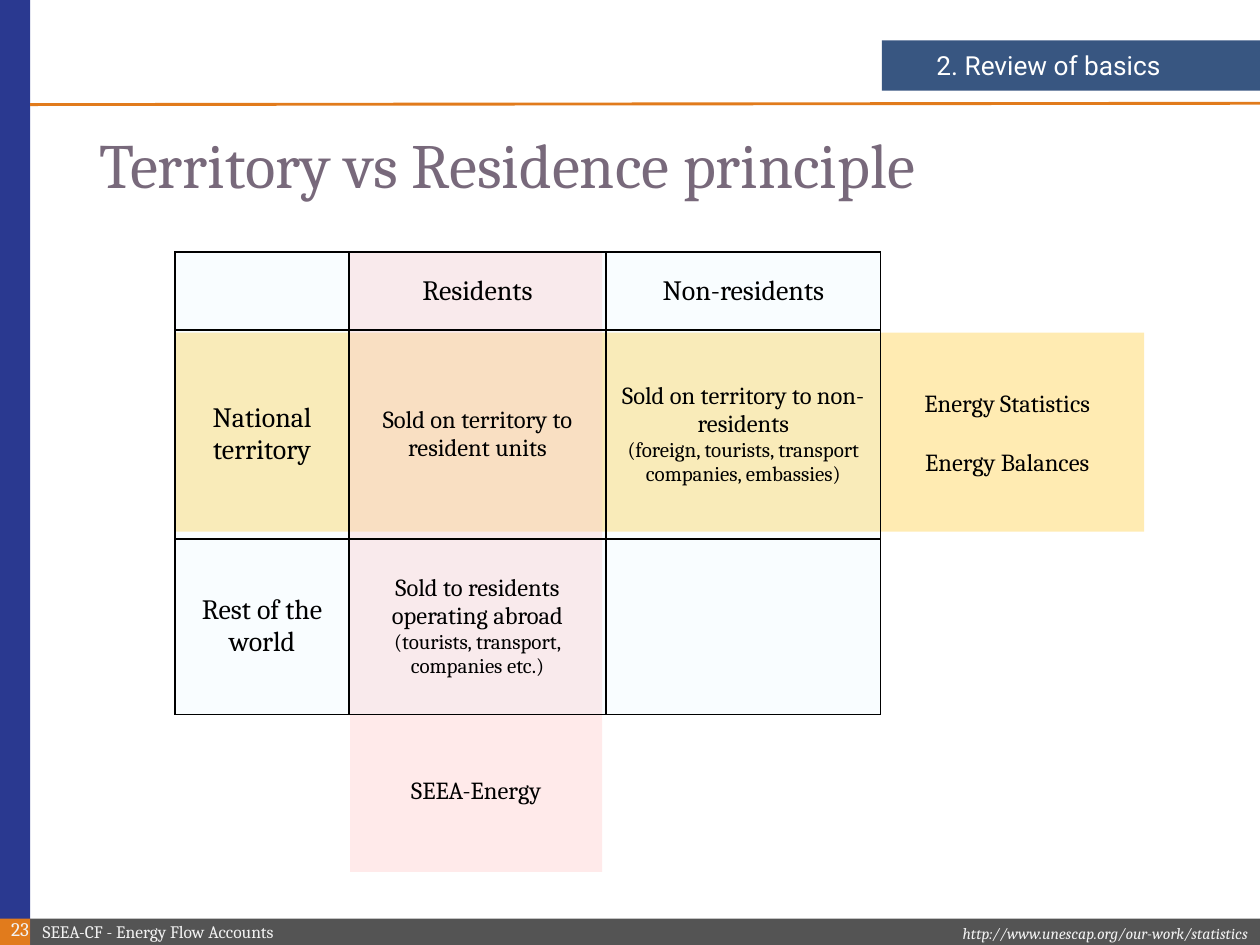
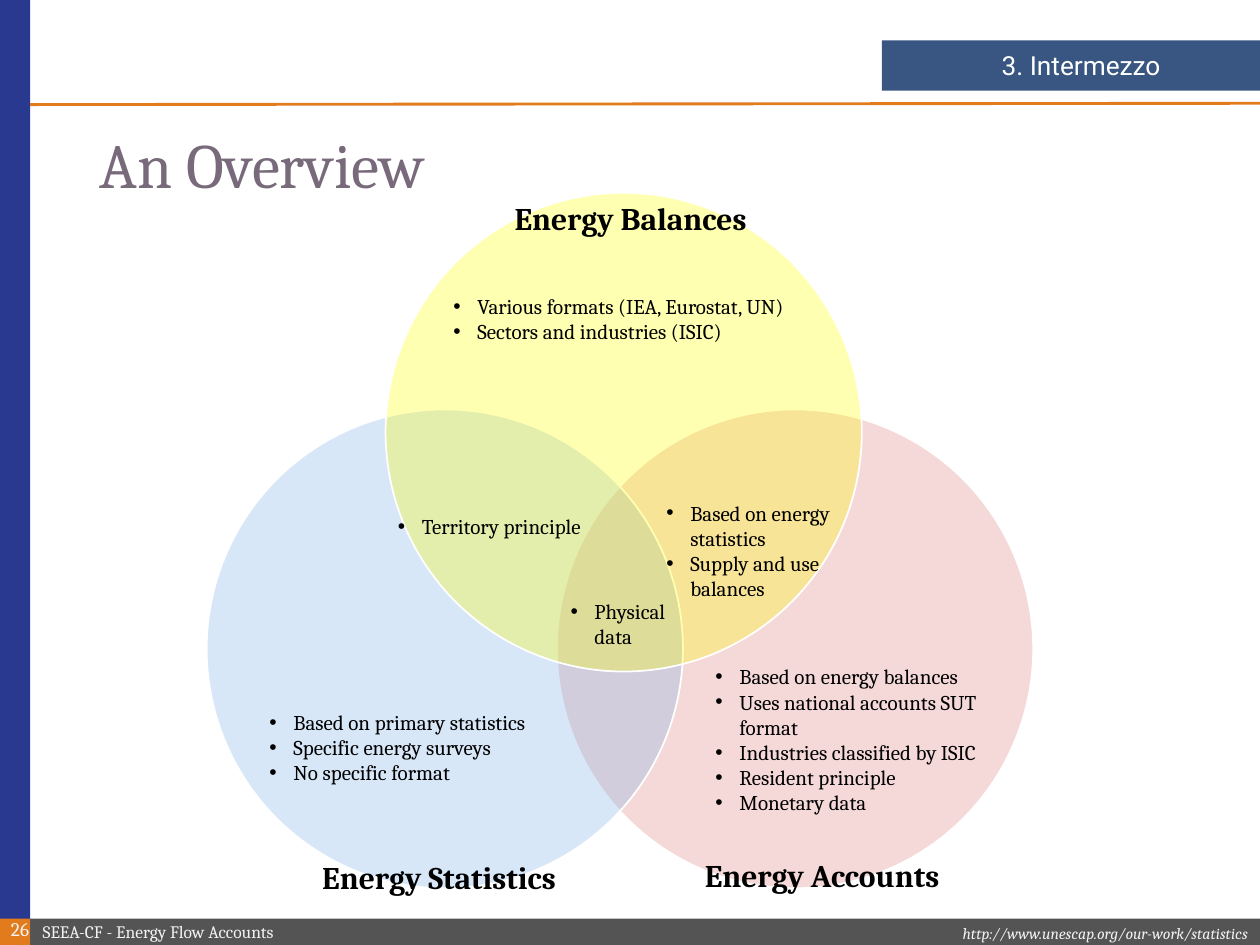
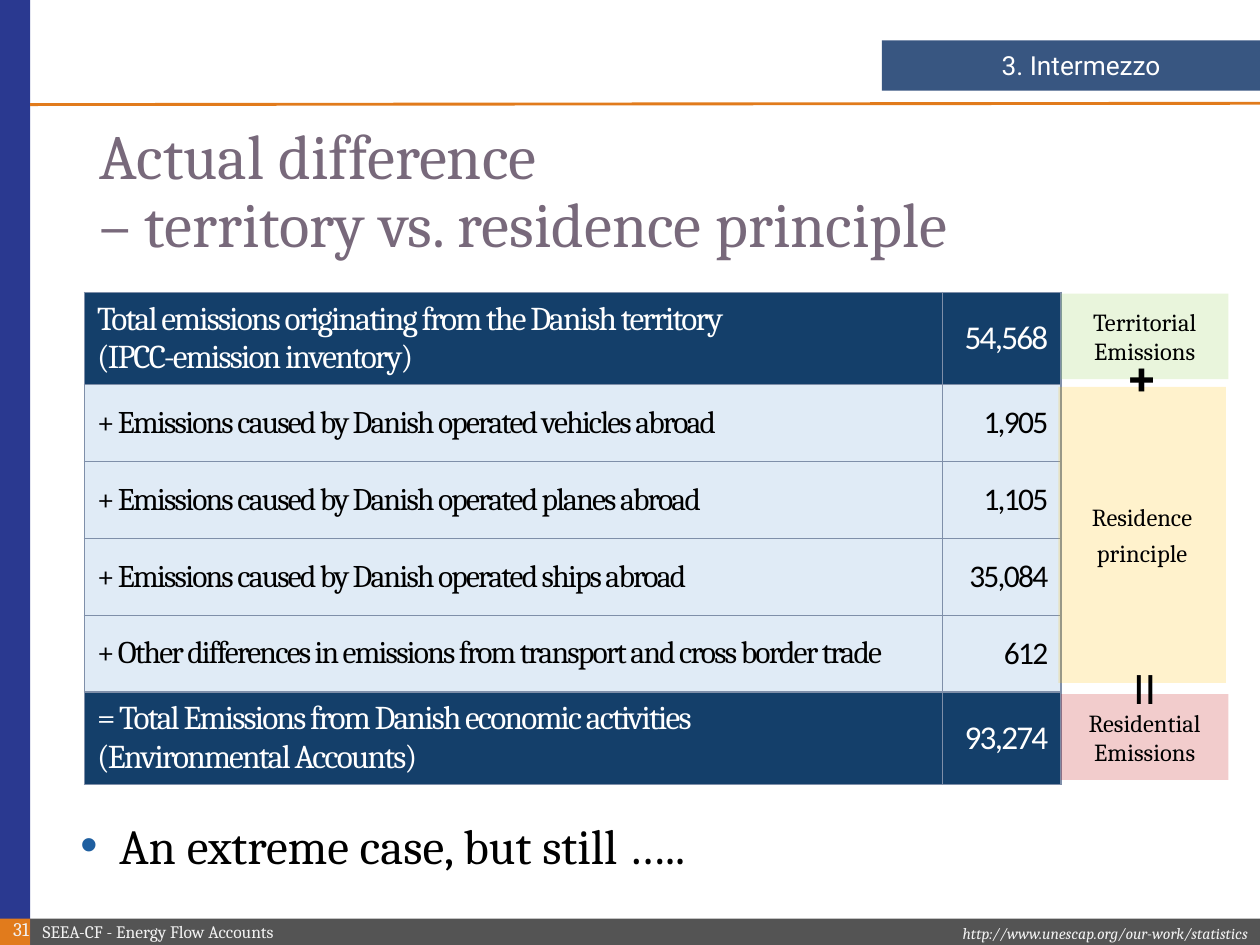
from lxml.etree import SubElement
from pptx import Presentation
from pptx.dml.color import RGBColor
from pptx.enum.shapes import MSO_CONNECTOR, MSO_SHAPE
from pptx.enum.text import MSO_ANCHOR, PP_ALIGN
from pptx.oxml import parse_xml
from pptx.oxml.ns import nsdecls, qn
from pptx.util import Inches, Pt

FONT = "Cambria"
BLACK, WHITE, PALE = "000000", "FFFFFF", "F2F2F2"
NAVY, ORANGE, GREY, TITLE = "2A3990", "E17B1C", "545454", "78697B"
PLAIN_BLUE, DARK_BLUE, LIGHT_BLUE = "CCECFF", "143F6A", "E0EBF6"
ALIGNMENTS = {"left": PP_ALIGN.LEFT, "center": PP_ALIGN.CENTER, "right": PP_ALIGN.RIGHT}

FOOTER = "SEEA-CF - Energy Flow Accounts"
ADDRESS = "http://www.unescap.org/our-work/statistics"

# Each cell lists its paragraphs as (text, size).
PRINCIPLE_ROWS = [
    [[], [("Residents", 16)], [("Non-residents", 16)]],
    [[("National territory", 16)],
     [("Sold on territory to resident units", 14)],
     [("Sold on territory to non-residents", 14),
      ("(foreign, tourists, transport companies, embassies)", 12)]],
    [[("Rest of the world", 16)],
     [("Sold to residents operating abroad", 14),
      ("(tourists, transport, companies etc.)", 12)],
     []],
]

CIRCLES = [
    (4.42, 3.25, "C00000", 15),
    (1.64, 3.25, "7EB2E6", 30),
    (3.06, 1.53, "FFFF00", 30),
]
CIRCLE_NAMES = [
    (3.92, 1.53, "Energy Balances"),
    (5.44, 6.74, "Energy Accounts"),
    (2.4, 6.76, "Energy Statistics"),
]
CIRCLE_NOTES = [
    ((3.06, 4.03, 1.71, 0.3), ["Territory principle"]),
    ((5.58, 5.22, 2.55, 1.31), [
        "Based on energy balances", "Uses national accounts SUT format",
        "Industries classified by ISIC", "Resident principle", "Monetary data"]),
    ((2.04, 5.58, 2.88, 0.71), [
        "Based on primary statistics", "Specific energy surveys", "No specific format"]),
    ((5.19, 3.92, 1.73, 0.91), ["Based on energy statistics", "Supply and use balances"]),
    ((3.5, 2.28, 2.99, 0.5), [
        "Various formats (IEA, Eurostat, UN)", "Sectors and industries (ISIC)"]),
    ((4.43, 4.7, 1.04, 0.5), ["Physical data"]),
]

# Totals have two lines of text.
EMISSIONS = [
    (["Total emissions originating from the Danish territory",
      "(IPCC-emission inventory)"], "54,568"),
    (["+ Emissions caused by Danish operated vehicles abroad"], "1,905"),
    (["+ Emissions caused by Danish operated planes abroad"], "1,105"),
    (["+ Emissions caused by Danish operated ships abroad"], "35,084"),
    (["+ Other differences in emissions from transport and cross border trade"], "612"),
    (["= Total Emissions from Danish economic activities",
      "(Environmental Accounts)"], "93,274"),
]
EMISSION_LABELS = [
    ((8.42, 2.33, 1.33, 0.68), "92D050", ["Territorial Emissions"]),
    ((8.4, 3.07, 1.33, 2.35), "FFC000", ["Residence", "principle"]),
    ((8.42, 5.51, 1.33, 0.68), "C00000", ["Residential Emissions"]),
]


def color(value):
    return RGBColor.from_string(value)


def set_fill(fill, value, opacity=100):
    fill.solid()
    fill.fore_color.rgb = color(value)
    if opacity < 100:
        element = fill._xPr.find(qn("a:solidFill")).find(qn("a:srgbClr"))
        SubElement(element, qn("a:alpha"), val=str(opacity * 1000))


def set_bullet(paragraph, indent, bullet_color=None):
    properties = paragraph._p.get_or_add_pPr()
    properties.set("marL", str(Inches(indent)))
    properties.set("indent", str(-Inches(indent)))
    if bullet_color:
        SubElement(SubElement(properties, qn("a:buClr")), qn("a:srgbClr"), val=bullet_color)
    SubElement(properties, qn("a:buFont"), typeface="Arial")
    SubElement(properties, qn("a:buChar"), char="•")


def write(frame, paragraphs, size=14, font=FONT, text_color=BLACK, bold=False, italic=False,
          align="left", middle=False, line_spacing=None, gap=0, indent=0,
          bullet_color=None, tracking=0):
    """Fill a text frame; a paragraph is a string or a (text, size) pair."""
    frame.word_wrap = True
    frame.vertical_anchor = MSO_ANCHOR.MIDDLE if middle else MSO_ANCHOR.TOP
    for index, entry in enumerate(paragraphs):
        text, text_size = (entry, size) if isinstance(entry, str) else entry
        paragraph = frame.add_paragraph() if index else frame.paragraphs[0]
        paragraph.alignment = ALIGNMENTS[align]
        if line_spacing:
            paragraph.line_spacing = line_spacing
        if gap and index:
            paragraph.space_before = Pt(gap)
        if indent:
            set_bullet(paragraph, indent, bullet_color)
        paragraph.text = text
        for run in paragraph.runs:
            run.font.name, run.font.size = font, Pt(text_size)
            run.font.bold, run.font.italic = bold, italic
            run.font.color.rgb = color(text_color)
            if tracking:
                run.font._element.set("spc", str(tracking * 100))


def add_text(slide, box, paragraphs, **text_format):
    shape = slide.shapes.add_textbox(*map(Inches, box))
    write(shape.text_frame, paragraphs, **text_format)


def add_block(slide, box, fill, opacity=100, outline=None, kind=MSO_SHAPE.RECTANGLE):
    shape = slide.shapes.add_shape(kind, *map(Inches, box))
    shape.shadow.inherit = False
    set_fill(shape.fill, fill, opacity)
    if outline:
        shape.line.color.rgb = color(outline)
        shape.line.width = Pt(1)
    else:
        shape.line.fill.background()
    return shape


def add_grid(slide, left, top, widths, heights):
    """Add an unbanded table with the given column widths and row heights."""
    table = slide.shapes.add_table(
        len(heights), len(widths), Inches(left), Inches(top),
        Inches(sum(widths)), Inches(sum(heights))).table
    table.first_row = table.horz_banding = False
    for column, width in zip(table.columns, widths):
        column.width = Inches(width)
    for row, height in zip(table.rows, heights):
        row.height = Inches(height)
    return table


def style_cell(cell, border, fill, opacity=100):
    set_fill(cell.fill, fill, opacity)
    cell.vertical_anchor = MSO_ANCHOR.MIDDLE
    for position, side in enumerate(("lnL", "lnR", "lnT", "lnB")):
        line = parse_xml(
            f'<a:{side} {nsdecls("a")} w="{Pt(1)}"><a:solidFill>'
            f'<a:srgbClr val="{border}"/></a:solidFill></a:{side}>')
        cell._tc.tcPr.insert(position, line)


def add_base_slide(presentation, number, section):
    slide = presentation.slides.add_slide(presentation.slide_layouts[6])
    add_block(slide, (7, 0.32, 3, 0.4), "072C62", 80)
    add_block(slide, (0.24, 7.29, 9.76, 0.21), GREY)
    add_block(slide, (0, 0, 0.24, 7.5), NAVY)
    add_block(slide, (0, 7.29, 0.24, 0.21), ORANGE)
    rule = slide.shapes.add_connector(
        MSO_CONNECTOR.STRAIGHT, *map(Inches, (0.24, 0.83, 10, 0.82)))
    rule.line.color.rgb = color(ORANGE)
    rule.line.width = Pt(1.65)
    SubElement(rule._element.spPr, qn("a:effectLst"))
    add_text(slide, (6.26, 7.28, 3.74, 0.25), [ADDRESS], size=9, text_color=PALE,
             italic=True, align="right")
    add_text(slide, (0.24, 7.29, 2.99, 0.2), [FOOTER], size=10, text_color=PALE, middle=True)
    add_text(slide, (-0.07, 7.22, 0.4, 0.31), [str(number)], size=11, text_color=PALE,
             align="right", middle=True)
    add_text(slide, (7, 0.34, 2.31, 0.35), [section], size=15, font="Roboto",
             text_color=WHITE, align="right", middle=True)
    return slide


def add_title(slide, text, height=0.89):
    add_text(slide, (0.69, 0.89, 8.62, height), [text], size=36, text_color=TITLE,
             middle=True, line_spacing=0.9)


def build_principles(presentation):
    slide = add_base_slide(presentation, 23, "2. Review of basics")
    add_block(slide, (1.39, 2.64, 7.69, 1.58), "FFC000", 30)
    add_block(slide, (2.78, 2, 2, 4.92), "FFCCCC", 40)
    table = add_grid(slide, 1.39, 2, [1.38, 2.04, 2.18], [0.62, 1.66, 1.39])
    for row_index, row in enumerate(PRINCIPLE_ROWS):
        for column_index, paragraphs in enumerate(row):
            cell = table.cell(row_index, column_index)
            write(cell.text_frame, paragraphs, align="center")
            style_cell(cell, BLACK, PLAIN_BLUE, 10)
    add_title(slide, "Territory vs Residence principle")
    add_text(slide, (7.08, 3.03, 1.83, 0.81), ["Energy Statistics", "Energy Balances"],
             align="center", gap=17)
    add_text(slide, (2.78, 6.1, 2, 0.34), ["SEEA-Energy"], align="center")


def build_overview(presentation):
    slide = add_base_slide(presentation, 26, "3. Intermezzo")
    for left, top, fill, opacity in CIRCLES:
        add_block(slide, (left, top, 3.78, 3.8), fill, opacity, WHITE,
                  MSO_SHAPE.FLOWCHART_CONNECTOR)
    for left, top, name in CIRCLE_NAMES:
        add_text(slide, (left, top, 2.17, 0.4), [name], size=18, bold=True,
                 align="center", middle=True)
    for box, notes in CIRCLE_NOTES:
        add_text(slide, box, notes, size=12, indent=0.19)
    add_title(slide, "An Overview")


def build_difference(presentation):
    slide = add_base_slide(presentation, 31, "3. Intermezzo")
    add_title(slide, "Actual difference\n– territory vs. residence principle", 1.28)
    heights = [0.73 if len(lines) > 1 else 0.61 for lines, _ in EMISSIONS]
    table = add_grid(slide, 0.67, 2.32, [6.81, 0.94], heights)
    for row_index, (lines, amount) in enumerate(EMISSIONS):
        is_total = len(lines) > 1
        row_format = {"size": 19 if is_total else 18, "tracking": -1,
                      "text_color": WHITE if is_total else BLACK}
        label_cell, amount_cell = table.rows[row_index].cells
        write(label_cell.text_frame, lines, **row_format)
        write(amount_cell.text_frame, [amount], font="Calibri", align="right", **row_format)
        for cell in (label_cell, amount_cell):
            style_cell(cell, "7F8FA9", DARK_BLUE if is_total else LIGHT_BLUE)
    for box, fill, lines in EMISSION_LABELS:
        label = add_block(slide, box, fill, 20)
        write(label.text_frame, lines, align="center", middle=True, gap=4)
    add_text(slide, (8.69, 2.65, 0.75, 0.64), ["+"], size=32, bold=True, align="center")
    add_text(slide, (8.71, 5.21, 0.75, 0.5), ["II"], size=24, font="Arial", align="center")
    add_text(slide, (0.54, 6.42, 7.16, 0.57), ["An extreme case, but still ….."], size=28,
             indent=0.31, bullet_color="1F5FA0")


def main():
    presentation = Presentation()
    presentation.slide_width, presentation.slide_height = Inches(10), Inches(7.5)
    build_principles(presentation)
    build_overview(presentation)
    build_difference(presentation)
    presentation.save("out.pptx")


if __name__ == "__main__":
    main()
